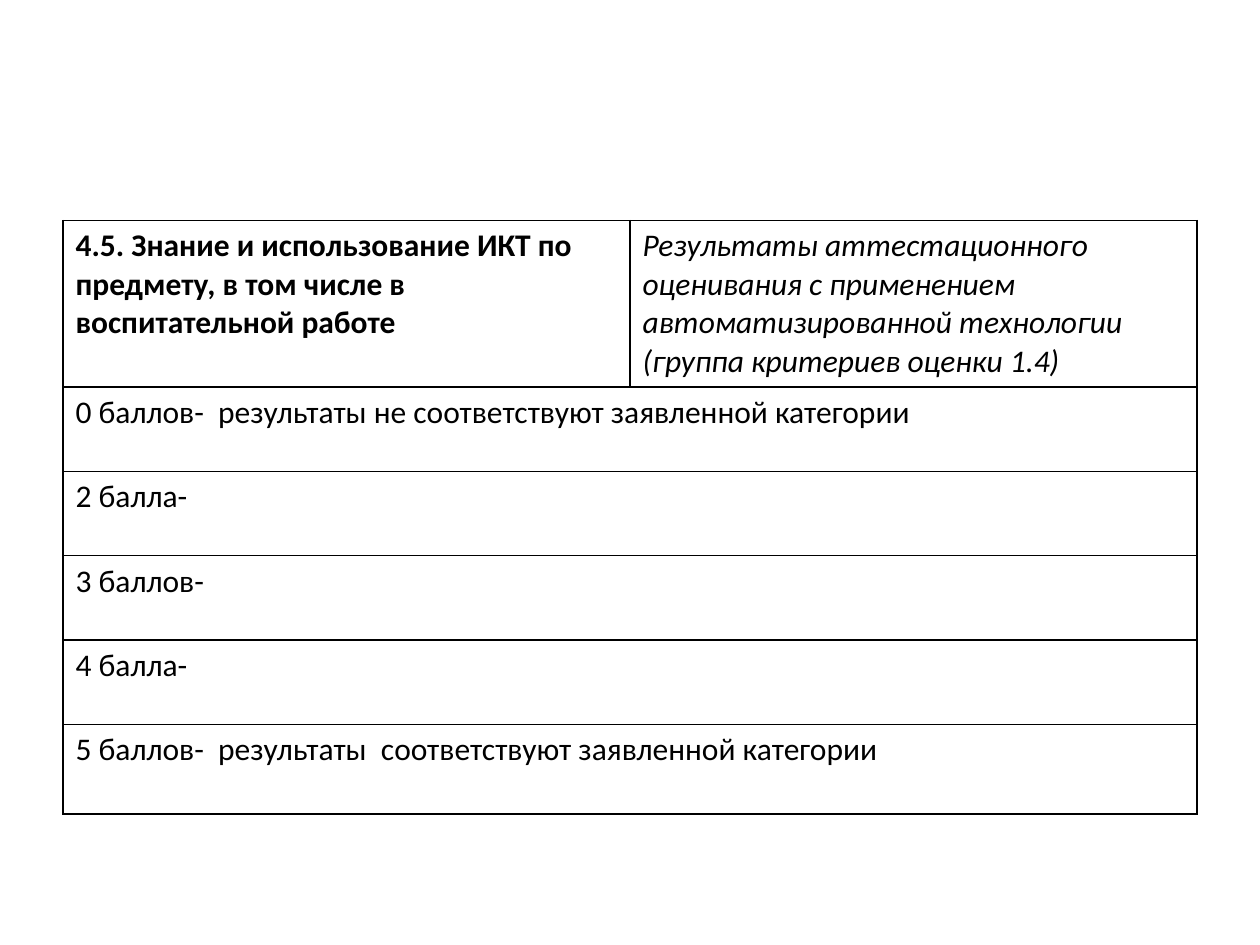
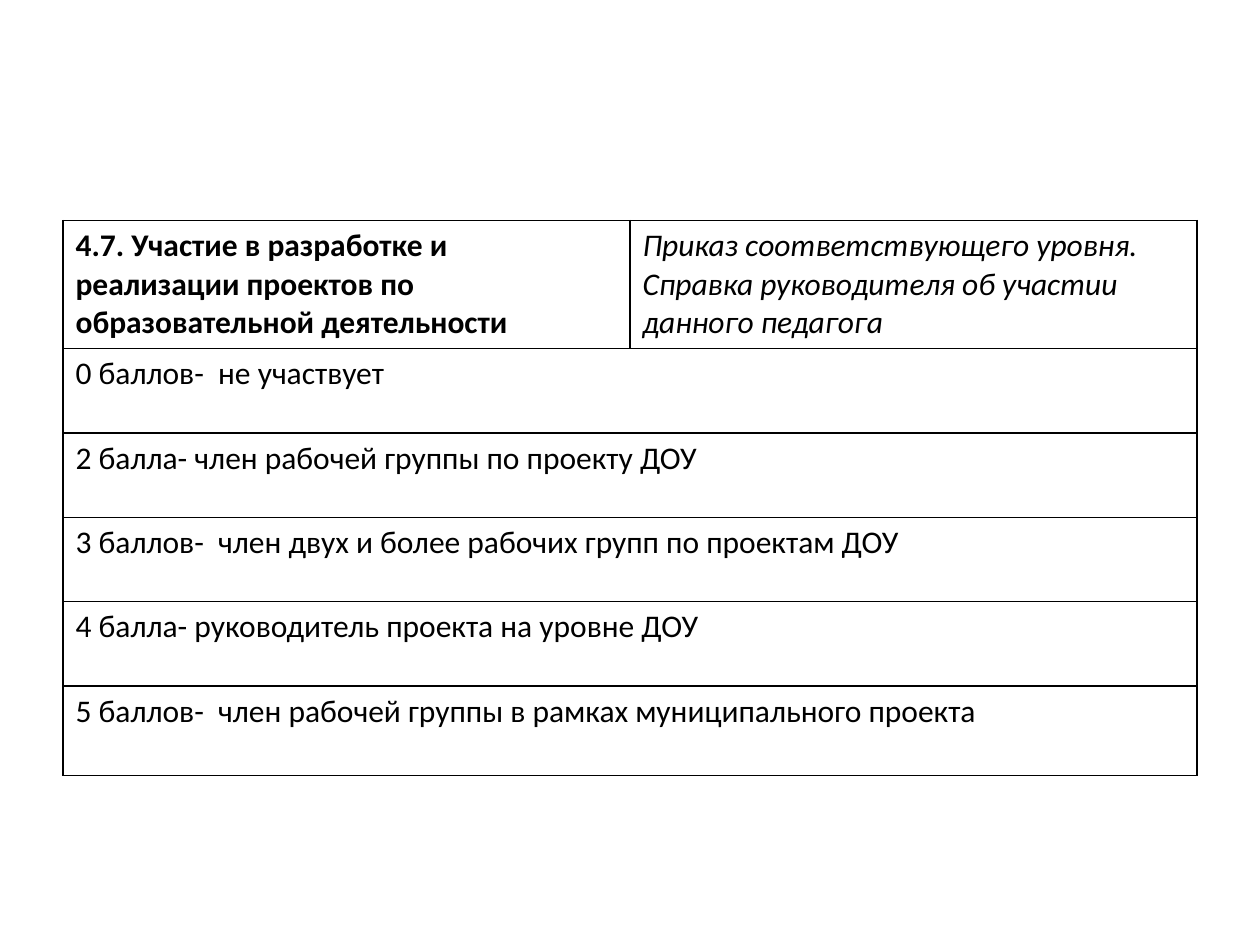
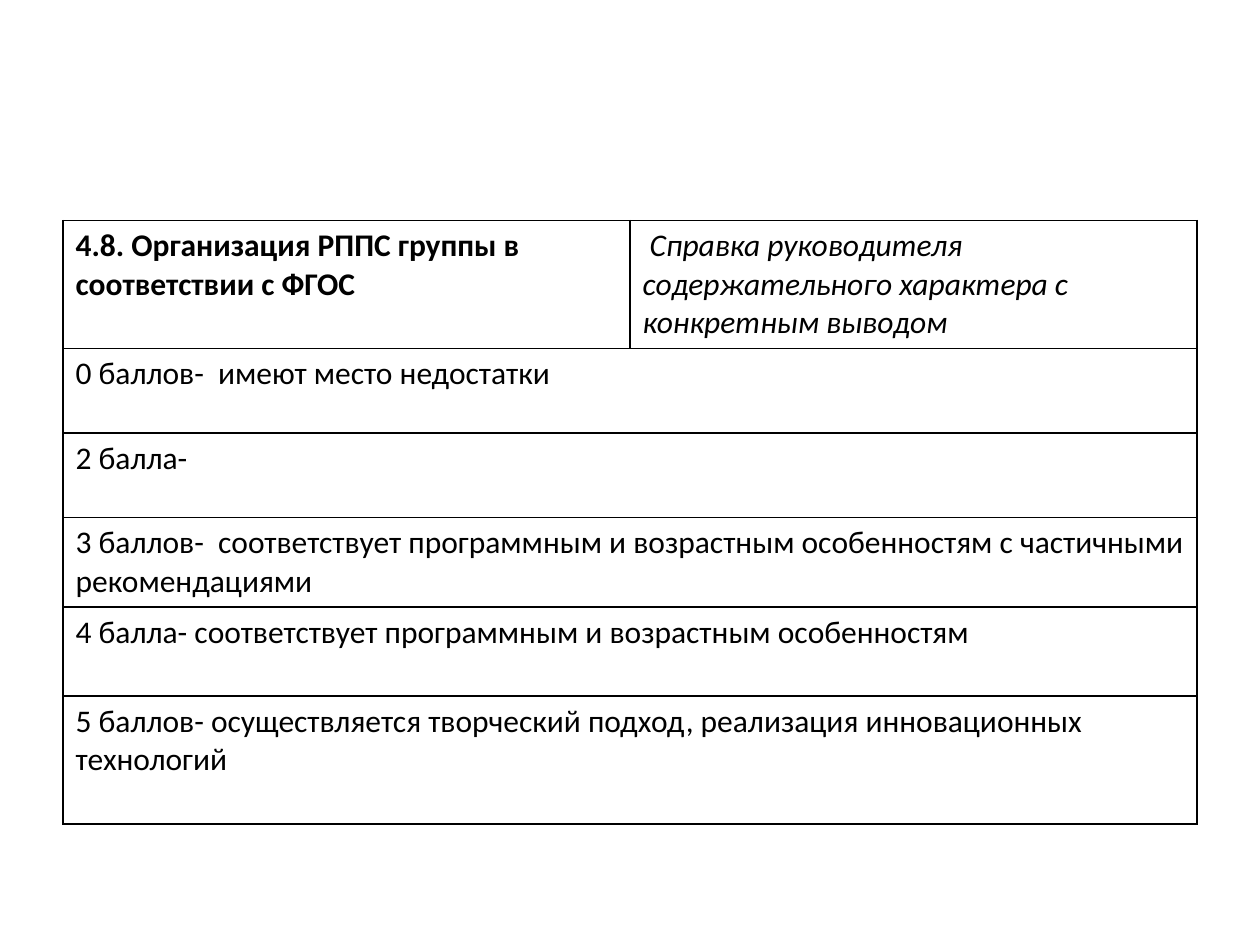
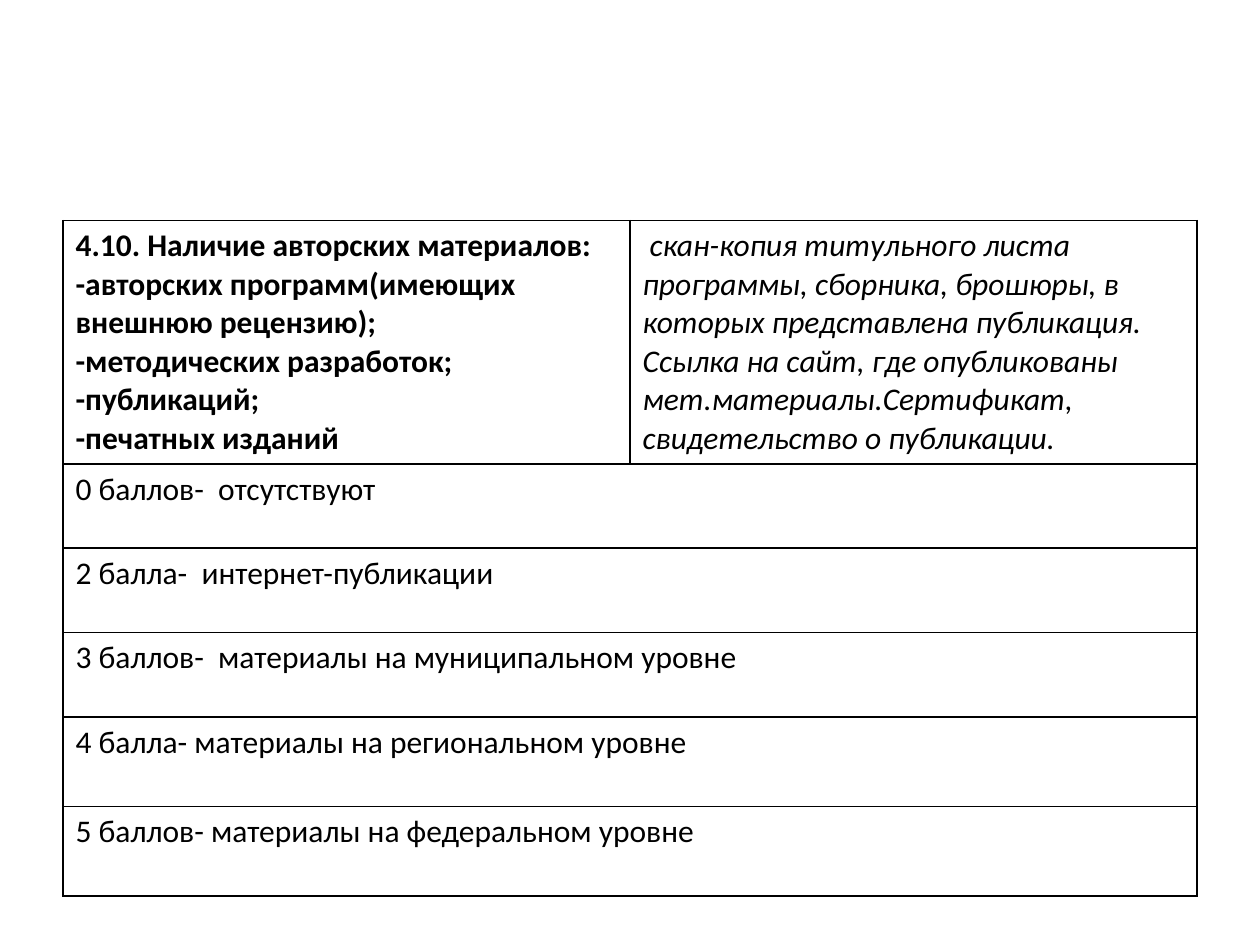
from lxml.etree import SubElement
from pptx import Presentation
from pptx.dml.color import RGBColor
from pptx.oxml.ns import qn
from pptx.util import Inches, Pt

COLORS = {"text": "000000", "border": "000000", "paper": "FFFFFF"}
FONT = {"name": "Calibri", "size": Pt(18)}
STYLES = {
    "criterion": {"bold": True, "italic": False},
    "evidence": {"bold": False, "italic": True},
    "score": {"bold": False, "italic": False},
}
SLIDE_W, SLIDE_H = 10, 7.5
LEFT, TOP, COLUMN_W = 0.5, 1.75, 4.5
LINE_H, PADDING, MIN_ROW_H = 0.305, 0.1, 0.67
BORDER_W = Pt(1)

# Each score is paired with the number of text lines its row has room for.
CRITERIA = [
    {
        "criterion": "4.5. Знание и использование ИКТ по предмету, "
                     "в том числе в воспитательной работе",
        "evidence": "Результаты аттестационного оценивания с применением "
                    "автоматизированной технологии (группа критериев оценки 1.4)",
        "header_lines": 4,
        "scores": [
            ("0 баллов-  результаты не соответствуют заявленной категории", 1),
            ("2 балла-", 1),
            ("3 баллов-", 1),
            ("4 балла-", 1),
            ("5 баллов-  результаты  соответствуют заявленной категории", 2),
        ],
    },
    {
        "criterion": "4.7. Участие в разработке и реализации проектов "
                     "по образовательной деятельности",
        "evidence": "Приказ соответствующего уровня. Справка руководителя "
                    "об участии данного педагога",
        "header_lines": 3,
        "scores": [
            ("0 баллов-  не участвует", 1),
            ("2 балла- член рабочей группы по проекту ДОУ", 1),
            ("3 баллов-  член двух и более рабочих групп по проектам ДОУ", 1),
            ("4 балла- руководитель проекта на уровне ДОУ", 1),
            ("5 баллов-  член рабочей группы в рамках муниципального проекта", 2),
        ],
    },
    {
        "criterion": "4.8. Организация РППС группы в соответствии с ФГОС",
        "evidence": " Справка руководителя  содержательного характера "
                    "с конкретным выводом",
        "header_lines": 3,
        "scores": [
            ("0 баллов-  имеют место недостатки", 1),
            ("2 балла-", 1),
            ("3 баллов-  соответствует программным и возрастным особенностям "
             "с частичными рекомендациями", 2),
            ("4 балла- соответствует программным и возрастным особенностям", 2),
            ("5 баллов- осуществляется творческий подход, реализация "
             "инновационных технологий", 3),
        ],
    },
    {
        "criterion": "4.10. Наличие авторских материалов:\n"
                     "-авторских программ(имеющих внешнюю рецензию);\n"
                     "-методических разработок;\n"
                     "-публикаций;\n"
                     "-печатных изданий",
        "evidence": " скан-копия титульного листа программы, сборника, брошюры, "
                    "в которых представлена публикация. Ссылка на сайт, где "
                    "опубликованы мет.материалы.Сертификат, свидетельство "
                    "о публикации.",
        "header_lines": 6,
        "scores": [
            ("0 баллов-  отсутствуют", 1),
            ("2 балла-  интернет-публикации", 1),
            ("3 баллов-  материалы на муниципальном уровне", 1),
            ("4 балла- материалы на региональном уровне", 2),
            ("5 баллов- материалы на федеральном уровне", 2),
        ],
    },
]


def row_height(lines):
    return max(MIN_ROW_H, PADDING + LINE_H * lines)


def set_borders(cell):
    tcPr = cell._tc.get_or_add_tcPr()
    for i, side in enumerate(("lnL", "lnR", "lnT", "lnB")):
        ln = tcPr.makeelement(qn(f"a:{side}"), {"w": str(BORDER_W)})
        fill = SubElement(ln, qn("a:solidFill"))
        SubElement(fill, qn("a:srgbClr"), val=COLORS["border"])
        tcPr.insert(i, ln)  # borders must precede the cell fill


def write_cell(cell, text, style):
    tf = cell.text_frame
    tf.text = text
    for p in tf.paragraphs:
        for r in p.runs:
            for name, value in {**FONT, **STYLES[style]}.items():
                setattr(r.font, name, value)
            r.font.color.rgb = RGBColor.from_string(COLORS["text"])


def add_criterion_table(slide, item):
    """Two header cells above full-width score rows."""
    scores = item["scores"]
    heights = [row_height(n) for n in
               [item["header_lines"], *(lines for _, lines in scores)]]
    table = slide.shapes.add_table(
        len(heights), 2, Inches(LEFT), Inches(TOP),
        Inches(2 * COLUMN_W), Inches(sum(heights))).table
    table.first_row = table.horz_banding = False
    for row, height in zip(table.rows, heights):
        row.height = Inches(height)
    for cell in table.iter_cells():
        cell.fill.solid()
        cell.fill.fore_color.rgb = RGBColor.from_string(COLORS["paper"])
        set_borders(cell)

    for col, style in enumerate(("criterion", "evidence")):
        write_cell(table.cell(0, col), item[style], style)
    for row, (text, _) in enumerate(scores, start=1):
        table.cell(row, 0).merge(table.cell(row, 1))
        write_cell(table.cell(row, 0), text, "score")


def main():
    prs = Presentation()
    prs.slide_width, prs.slide_height = Inches(SLIDE_W), Inches(SLIDE_H)
    blank = prs.slide_layouts.get_by_name("Blank")
    for item in CRITERIA:
        add_criterion_table(prs.slides.add_slide(blank), item)
    prs.save("out.pptx")


if __name__ == "__main__":
    main()
